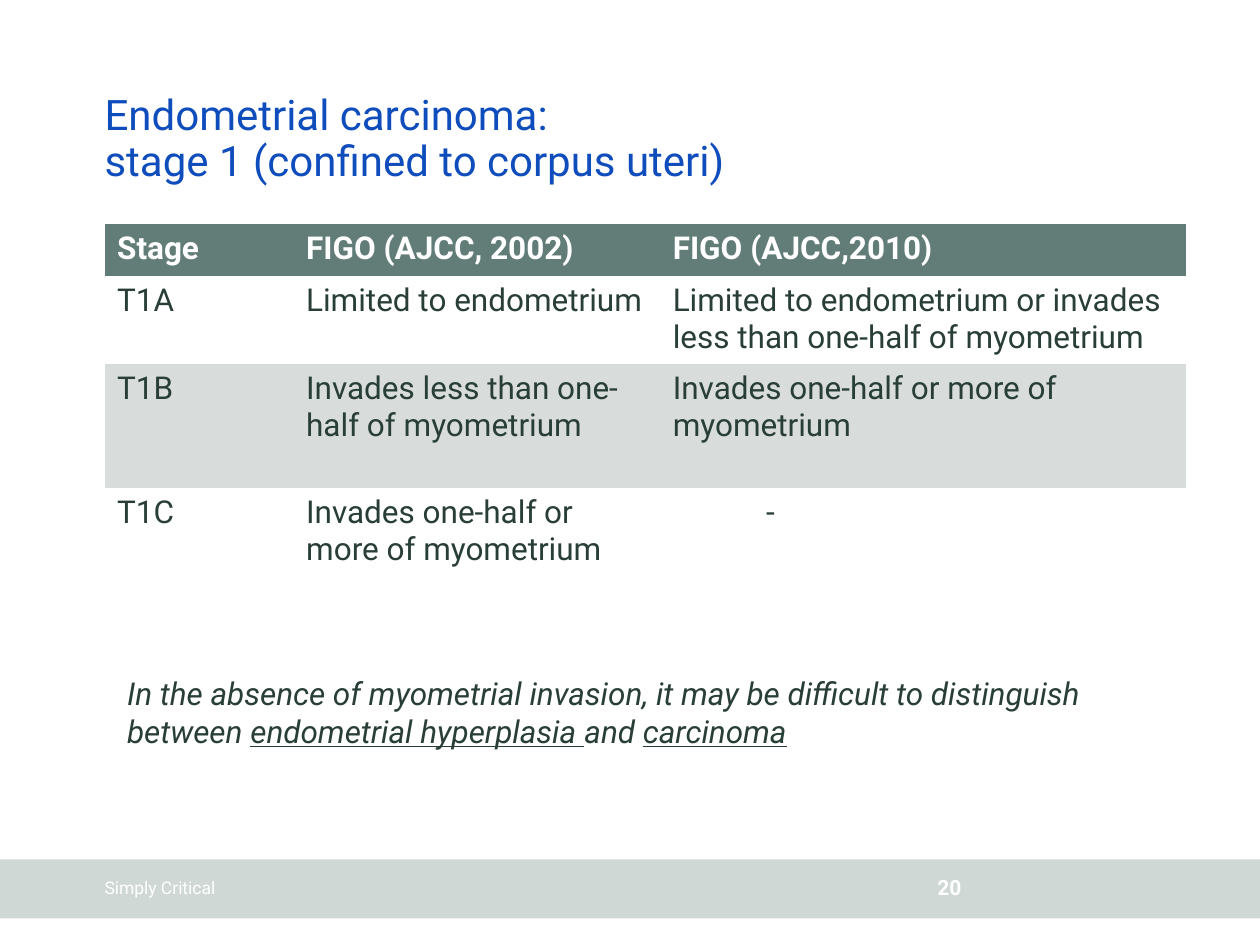
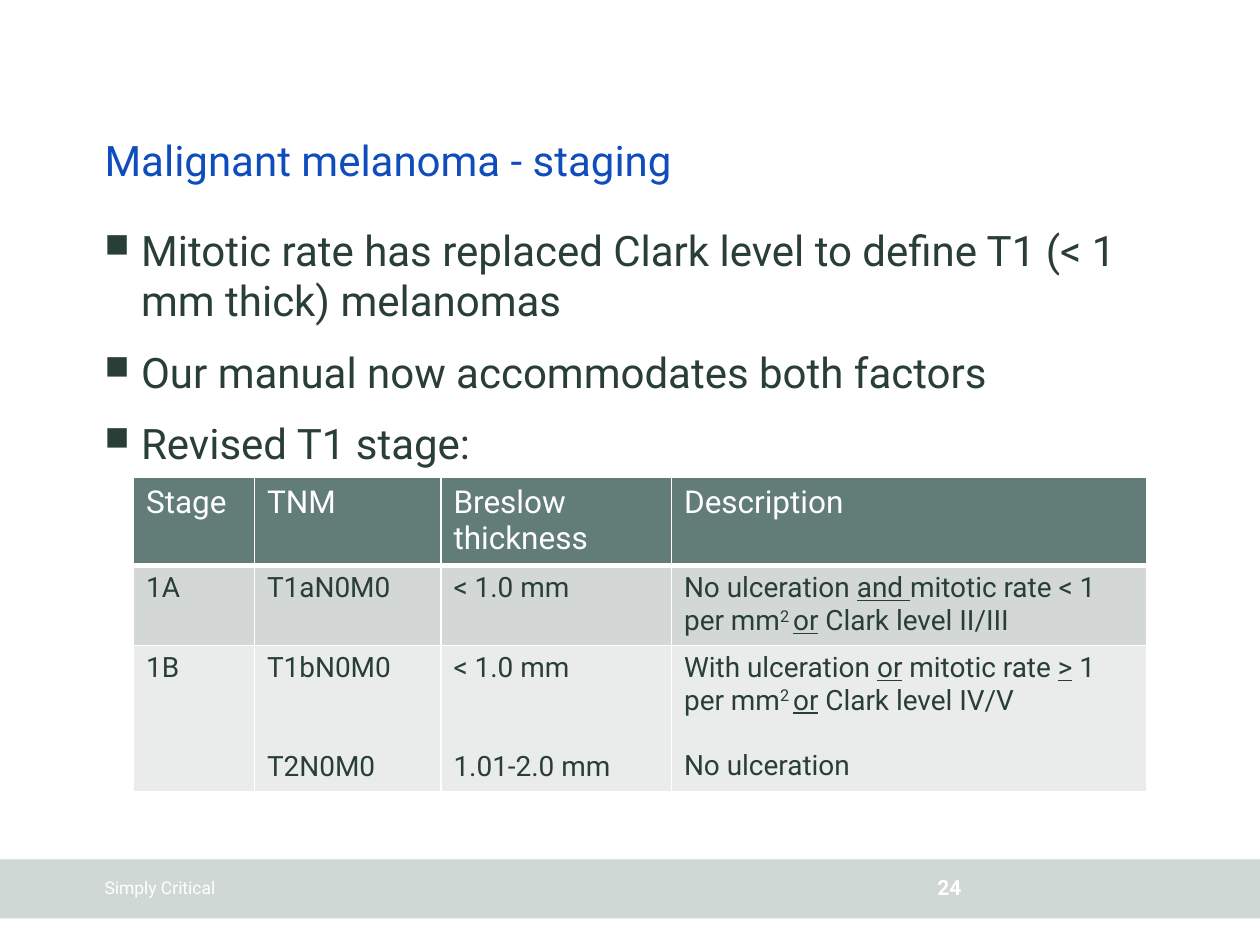
import dataclasses

import lxml.etree
import pptx
import pptx.dml.color
import pptx.enum.shapes
import pptx.enum.text
import pptx.oxml.ns
import pptx.util

GRID = 0.1
FONT = "Roboto"
TITLE_BLUE = "0F4DBC"
TEXT_GREEN = "283E36"
HEADER_GREEN = "627D77"
BAND_GREEN = "D0D8D6"
WHITE = "FFFFFF"
PLAIN_TABLE = "{2D5ABB26-0587-4C30-8999-92F81FD0307C}"
LINE_16 = 18.8
UNDERLINED = {"underline": True}
SUPERSCRIPT = {"baseline": 30000}

TITLE = {"size": 24, "color": TITLE_BLUE}
BULLET = {"size": 24, "color": TEXT_GREEN}
NOTE = {"size": 18, "color": TEXT_GREEN, "italic": True}
FOOTER = {"size": 10, "color": WHITE}
PAGE_NUMBER = {"size": 12, "color": WHITE, "bold": True}
HEADING = {"size": 18, "color": WHITE}
BODY_18 = {"size": 18, "color": TEXT_GREEN}
BODY_16 = {"size": 16, "color": TEXT_GREEN}


@dataclasses.dataclass
class Box:
    left: float
    top: float
    width: float
    height: float

    def area(self, left, top, width, height):
        return Box(self.left + left, self.top + top, width, height)

    def emu(self):
        return [units(n) for n in (self.left, self.top, self.width, self.height)]


PAGE = Box(0, 0, 100, 75)
TITLE_AREA = PAGE.area(8.3, 5.2, 63.8, 9.5)
CONTENT = PAGE.area(8.3, 17.8, 85.8, 47.3)
BAND = PAGE.area(0, 68.2, 100, 4.7)


def units(squares):
    return pptx.util.Inches(squares * GRID)


def rgb(value):
    return pptx.dml.color.RGBColor.from_string(value)


def format_run(run, formats):
    for name, value in {"name": FONT, **formats}.items():
        if name == "color":
            run.font.color.rgb = rgb(value)
        elif name == "baseline":
            run._r.get_or_add_rPr().set("baseline", str(value))
        else:
            setattr(run.font, name, pptx.util.Pt(value) if name == "size" else value)


def write_paragraph(paragraph, content, formats, spacing):
    for name, value in spacing.items():
        setattr(paragraph, name, value)
    if isinstance(content, str):
        paragraph.text = content
        for run in paragraph.runs:
            format_run(run, formats)
        return
    for text, extra in content:
        run = paragraph.add_run()
        run.text = text
        format_run(run, {**formats, **extra})


def write_paragraphs(frame, contents, formats, gap=0, first_spacing=None):
    for index, content in enumerate(contents):
        paragraph = frame.add_paragraph() if index else frame.paragraphs[0]
        spacing = {"space_before": pptx.util.Pt(gap)} if index else first_spacing or {}
        write_paragraph(paragraph, content, formats, spacing)


def add_text(slide, box, contents, formats, anchor="TOP", wrap=True, inset=0, **options):
    shape = slide.shapes.add_textbox(*box.emu())
    frame = shape.text_frame
    frame.word_wrap = wrap
    frame.vertical_anchor = getattr(pptx.enum.text.MSO_ANCHOR, anchor)
    for side in ("left", "top", "right", "bottom"):
        setattr(frame, f"margin_{side}", pptx.util.Inches(inset))
    write_paragraphs(frame, contents, formats, **options)
    return frame


def add_title(slide, box, title):
    add_text(slide, box, [title], TITLE, anchor="BOTTOM",
             first_spacing={"line_spacing": 0.9})


def add_footer_band(slide, box, page_number):
    band = slide.shapes.add_shape(
        pptx.enum.shapes.MSO_SHAPE.RECTANGLE, *box.emu())
    band.shadow.inherit = False
    band.fill.solid()
    band.fill.fore_color.rgb = rgb(BAND_GREEN)
    band.line.fill.background()
    add_text(slide, box.area(8.3, 1.6, 64.6, 1.5), ["Simply Critical"], FOOTER,
             anchor="BOTTOM")
    add_text(slide, box.area(74.4, 1.2, 2, 2), [page_number], PAGE_NUMBER,
             anchor="BOTTOM", wrap=False)


def add_bullets(slide, box, items):
    frame = add_text(slide, box, items, BULLET, gap=12)
    for paragraph in frame.paragraphs:
        properties = paragraph._p.get_or_add_pPr()
        properties.set("marL", str(units(2.9)))
        properties.set("indent", str(-units(2.9)))
        for tag, name, value in (("a:buSzPct", "val", "80000"), ("a:buChar", "char", "■")):
            element = lxml.etree.SubElement(properties, pptx.oxml.ns.qn(tag))
            element.set(name, value)


def add_cell_borders(cell, widths):
    properties = cell._tc.get_or_add_tcPr()
    for side, width in zip("LRTB", widths):
        line = lxml.etree.SubElement(
            properties, pptx.oxml.ns.qn(f"a:ln{side}"), w=str(pptx.util.Pt(width)))
        fill = lxml.etree.SubElement(line, pptx.oxml.ns.qn("a:solidFill"))
        lxml.etree.SubElement(fill, pptx.oxml.ns.qn("a:srgbClr"), val=WHITE)


def add_stage_table(slide, box, columns, rows, contents, fills, heading, body,
                    bordered=False, gaps=None):
    table = slide.shapes.add_table(len(rows), len(columns), *box.emu()).table
    table._tbl.tblPr.find(pptx.oxml.ns.qn("a:tableStyleId")).text = PLAIN_TABLE
    for column, width in zip(table.columns, columns):
        column.width = units(width)
    for row, height in zip(table.rows, rows):
        row.height = units(height)
    for row_index, row_contents in enumerate(contents):
        for column_index, content in enumerate(row_contents):
            cell = table.cell(row_index, column_index)
            if bordered:
                add_cell_borders(cell, (1, 1, 1, 1 if row_index else 3))
            if fills[row_index]:
                cell.fill.solid()
                cell.fill.fore_color.rgb = rgb(fills[row_index])
            else:
                cell.fill.background()
            write_paragraphs(cell.text_frame, content if isinstance(content, list) else [content],
                             body if row_index else heading,
                             gap=gaps[column_index] if gaps else 0)
    return table


def add_base_slide(presentation, title, page_number):
    slide = presentation.slides.add_slide(presentation.slide_layouts[6])
    add_footer_band(slide, BAND, page_number)
    add_title(slide, TITLE_AREA, title)
    return slide


def build_endometrial_slide(presentation, box):
    slide = add_base_slide(
        presentation, "Endometrial carcinoma:\vstage 1 (confined to corpus uteri)", "20")
    contents = [
        ["Stage", "FIGO (AJCC, 2002)", "FIGO (AJCC,2010)"],
        ["T1A", "Limited to endometrium",
         "Limited to endometrium or invades less than one-half of myometrium"],
        ["T1B", "Invades less than one-half of myometrium",
         "Invades one-half or more of myometrium"],
        ["T1C", "Invades one-half or more of myometrium", "-"],
    ]
    table = add_stage_table(
        slide, box.area(0, 0, 85.8, 28.1), (15, 29.1, 41.7), (4.1, 6.9, 9.8, 7.3),
        contents, (HEADER_GREEN, None, "D8DCDB", None), {**HEADING, "bold": True}, BODY_18)
    table.cell(3, 2).margin_left = units(8.4)
    note = [
        "In the absence of myometrial invasion, it may be difficult to distinguish",
        [("between ", {}), ("endometrial hyperplasia ", UNDERLINED),
         ("and ", {}), ("carcinoma", UNDERLINED)],
    ]
    add_text(slide, box.area(0.8, 34.7, 82.1, 7.1), note, NOTE, inset=0.1)


def build_melanoma_slide(presentation, box):
    slide = add_base_slide(presentation, "Malignant melanoma - staging", "24")
    add_bullets(slide, box, [
        "Mitotic rate has replaced Clark level to define T1 (< 1 mm thick) melanomas",
        "Our manual now accommodates both factors",
        "Revised T1 stage:",
    ])
    squared_or = [("2 ", SUPERSCRIPT), ("or", UNDERLINED)]
    low_risk = [("No ulceration ", {}), ("and ", UNDERLINED),
                ("mitotic rate < 1 per mm", {}), *squared_or, (" Clark level II/III", {})]
    high_risk = [("With ulceration ", {}), ("or", UNDERLINED), (" mitotic rate ", {}),
                 (">", UNDERLINED), (" 1 per mm", {}), *squared_or,
                 (" Clark level IV/V", {})]
    contents = [
        ["Stage", "TNM", "Breslow thickness", "Description"],
        ["1A", "T1aN0M0", "< 1.0 mm", [low_risk]],
        ["1B", ["T1bN0M0", "T2N0M0"], ["< 1.0 mm", "1.01-2.0 mm"],
         [high_risk, "No ulceration"]],
    ]
    add_stage_table(
        slide, box.area(2.3, 20.1, 80.4, 24.3), (9.6, 14.8, 18.3, 37.7), (6.8, 6.2, 11.3),
        contents, (HEADER_GREEN, "D3D7D6", "EAECEC"), HEADING, BODY_16,
        bordered=True, gaps=(0, 2 * LINE_16, 2 * LINE_16, LINE_16))


def main():
    presentation = pptx.Presentation()
    presentation.slide_width = units(PAGE.width)
    presentation.slide_height = units(PAGE.height)
    build_endometrial_slide(presentation, CONTENT)
    build_melanoma_slide(presentation, CONTENT)
    presentation.save("out.pptx")


if __name__ == "__main__":
    main()
